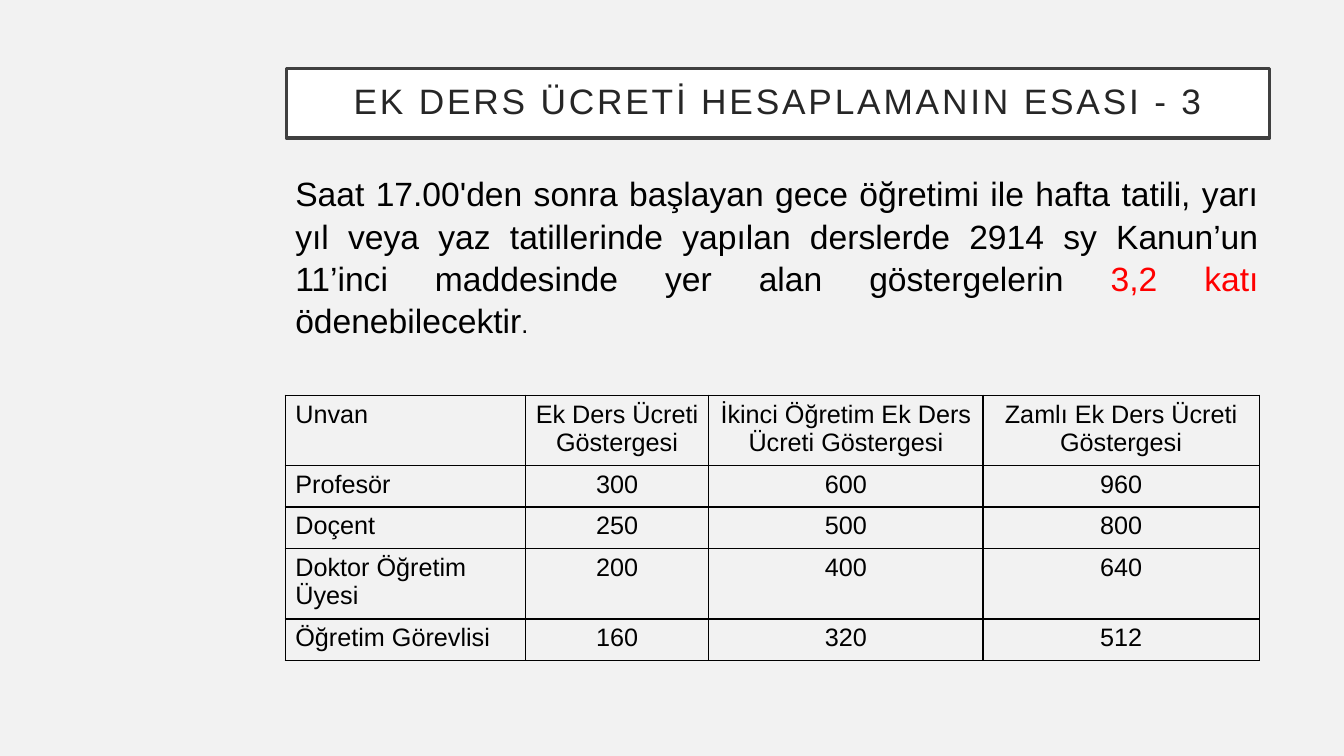
from lxml import etree
from pptx import Presentation
from pptx import util as u
from pptx.dml.color import RGBColor
from pptx.enum import text
from pptx.oxml import ns

BACKDROP = RGBColor(0xF2, 0xF2, 0xF2)
WHITE = RGBColor(0xFF, 0xFF, 0xFF)
FRAME = RGBColor(0x40, 0x40, 0x40)
HEADING = RGBColor(0x26, 0x26, 0x26)
BLACK = RGBColor(0, 0, 0)
RED = RGBColor(0xFF, 0, 0)

WIDTH, HEIGHT = u.Inches(13.33), u.Inches(7.5)
LEFT, TOTAL = 2.83 / 13.33, 9.75 / 13.33
COLUMN_SHARES = (2.38, 1.82, 2.72, 2.74)
ROW_HEIGHT = u.Inches(0.41)

EXPLANATION = (
    ("Saat 17.00'den sonra başlayan gece öğretimi ile hafta tatili, yarı yıl "
     "veya yaz tatillerinde yapılan derslerde 2914 sy Kanun’un 11’inci "
     "maddesinde yer alan göstergelerin ", {}),
    ("3,2 katı ", {"color": RED}),
    ("ödenebilecektir", {}),
    (". ", {"size": 18}),
)
INDICATORS = (
    ("Unvan", "Ek Ders Ücreti Göstergesi",
     "İkinci Öğretim Ek Ders Ücreti Göstergesi",
     "Zamlı Ek Ders Ücreti Göstergesi"),
    ("Profesör", "300", "600", "960"),
    ("Doçent", "250", "500", "800"),
    ("Doktor Öğretim Üyesi", "200", "400", "640"),
    ("Öğretim Görevlisi", "160", "320", "512"),
)


def box(top, height, left=LEFT, width=TOTAL):
    return (int(WIDTH * left), int(HEIGHT * top),
            int(WIDTH * width), int(HEIGHT * height))


def write(paragraph, words, size=18, color=BLACK,
          align=text.PP_ALIGN.LEFT, tracking=None):
    paragraph.alignment = align
    run = paragraph.add_run()
    run.text = words
    run.font.name = "Arial"
    run.font.size = u.Pt(size)
    run.font.color.rgb = color
    if tracking:
        run.font._element.set("spc", str(tracking * 100))


def add_heading(slide, area):
    heading = slide.shapes.title
    heading.left, heading.top, heading.width, heading.height = area
    heading.fill.solid()
    heading.fill.fore_color.rgb = WHITE
    heading.line.color.rgb = FRAME
    heading.line.width = u.Pt(2.5)
    frame = heading.text_frame
    frame.word_wrap = True
    frame.auto_size = text.MSO_AUTO_SIZE.NONE
    frame.vertical_anchor = text.MSO_ANCHOR.MIDDLE
    frame.margin_left = frame.margin_right = u.Inches(0.2)
    frame.margin_top = frame.margin_bottom = u.Inches(0.2)
    paragraph = frame.paragraphs[0]
    paragraph.line_spacing = 0.9
    write(paragraph, "EK DERS ÜCRETİ HESAPLAMANIN ESASI - 3", size=25.2,
          color=HEADING, align=text.PP_ALIGN.CENTER, tracking=2)


def add_explanation(slide, area):
    frame = slide.shapes.add_textbox(*area).text_frame
    frame.word_wrap = True
    paragraph = frame.paragraphs[0]
    paragraph.space_before = u.Pt(10)
    paragraph.line_spacing = 1.05
    for words, style in EXPLANATION:
        write(paragraph, words, align=text.PP_ALIGN.JUSTIFY,
              **{"size": 24, **style})


def outline_cell(cell):
    properties = cell._tc.get_or_add_tcPr()
    for place, side in enumerate(("lnL", "lnR", "lnT", "lnB")):
        border = etree.Element(ns.qn(f"a:{side}"), w=str(u.Pt(1)))
        paint = etree.SubElement(border, ns.qn("a:solidFill"))
        etree.SubElement(paint, ns.qn("a:srgbClr"), val=str(BLACK))
        properties.insert(place, border)


def add_indicators(slide, area):
    table = slide.shapes.add_table(
        len(INDICATORS), len(COLUMN_SHARES), *area).table
    table.first_row = table.horz_banding = False
    for column, share in zip(table.columns, COLUMN_SHARES):
        column.width = int(area[2] * share / sum(COLUMN_SHARES))
    for row, entries in zip(table.rows, INDICATORS):
        row.height = ROW_HEIGHT
        for index, (cell, entry) in enumerate(zip(row.cells, entries)):
            cell.fill.background()
            outline_cell(cell)
            align = text.PP_ALIGN.CENTER if index else text.PP_ALIGN.LEFT
            write(cell.text_frame.paragraphs[0], entry, align=align)


def main():
    deck = Presentation()
    deck.slide_width, deck.slide_height = WIDTH, HEIGHT
    slide = deck.slides.add_slide(deck.slide_layouts[5])
    slide.background.fill.solid()
    slide.background.fill.fore_color.rgb = BACKDROP
    add_heading(slide, box(0.68 / 7.5, 0.69 / 7.5, left=2.84 / 13.33))
    add_explanation(slide, box(0.22, 2.01 / 7.5))
    add_indicators(slide, box(3.92 / 7.5, 2.62 / 7.5, width=9.66 / 13.33))
    deck.save("out.pptx")


if __name__ == "__main__":
    main()
